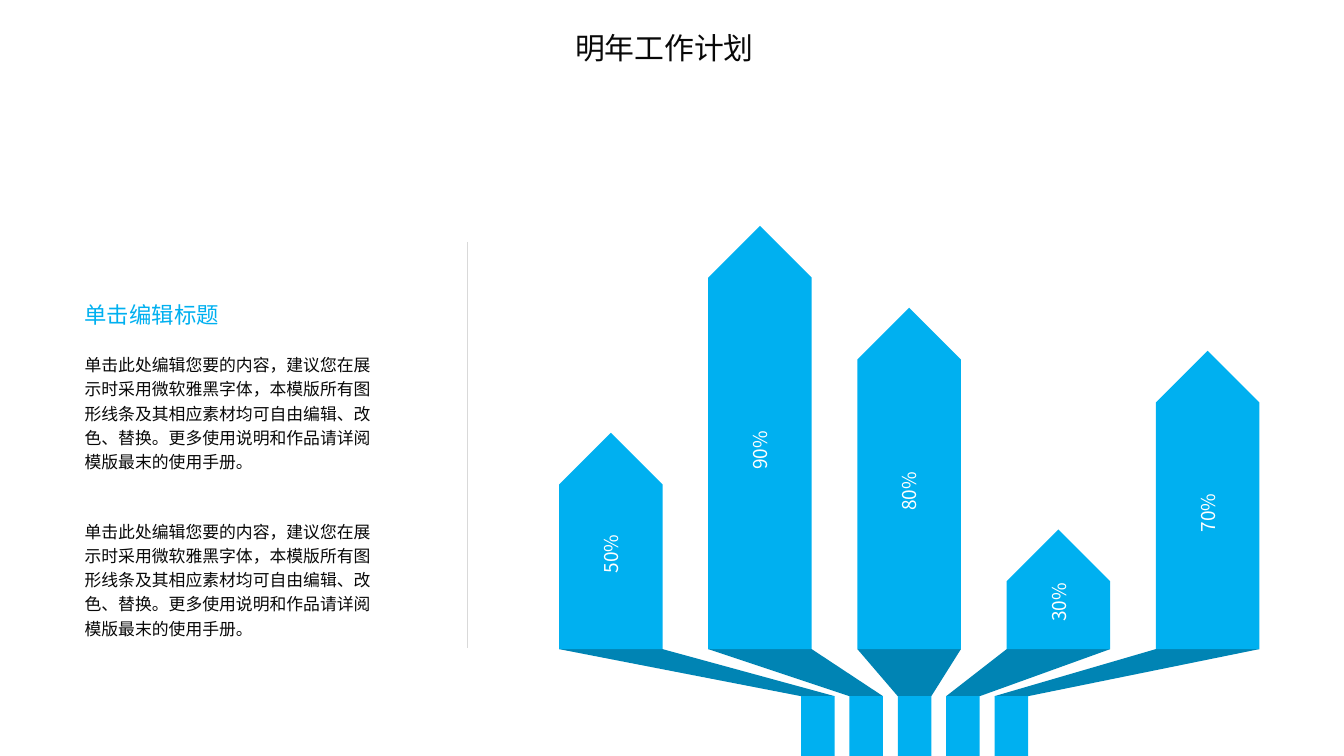
import pptx
import pptx.util
import pptx.dml.color
import pptx.enum.shapes
import pptx.enum.text
import pptx.oxml.ns
import lxml.etree

Inches = pptx.util.Inches
Pt = pptx.util.Pt
kinds = pptx.enum.shapes.MSO_SHAPE
align = pptx.enum.text.PP_ALIGN
qn = pptx.oxml.ns.qn

colors = {
    "ink": "080808",
    "blue": "00B0F0",
    "dark": "0084B4",
    "rule": "D9D9D9",
    "white": "FFFFFF",
}
font = "Noto Sans CJK SC"
body = (
    "单击此处编辑您要的内容，建议您在展示时采用微软雅黑字体，"
    "本模版所有图形线条及其相应素材均可自由编辑、改色、替换。"
    "更多使用说明和作品请详阅模版最末的使用手册。"
)


def paint(shape, color):
    shape.shadow.inherit = False
    shape.fill.solid()
    shape.fill.fore_color.rgb = pptx.dml.color.RGBColor.from_string(colors[color])
    shape.line.fill.background()


def write(shape, text, size, color, inset=0):
    frame = shape.text_frame
    frame.word_wrap = True
    frame.margin_left = frame.margin_right = Inches(inset)
    frame.margin_top = frame.margin_bottom = Inches(inset / 2)
    para = frame.paragraphs[0]
    run = para.add_run()
    run.text = text
    run.font.size = Pt(size)
    run.font.name = font
    run.font.color.rgb = pptx.dml.color.RGBColor.from_string(colors[color])
    east = lxml.etree.SubElement(run.font._element, qn("a:ea"))
    east.set("typeface", font)
    return para


deck = pptx.Presentation()
deck.slide_width = Inches(10)
deck.slide_height = Inches(10) * 9 // 16
slide = deck.slides.add_slide(deck.slide_layouts[6])
shapes = slide.shapes

title = shapes.add_textbox(Inches(4.18), Inches(0.17), Inches(1.61), Inches(0.37))
write(title, "明年工作计划", 16, "ink", 0.1)

base, neck = 4.83, 5.18
wide, slim = 0.77, 0.25
bars = [("50%", 1.61), ("90%", 3.15), ("80%", 2.54), ("30%", 0.89), ("70%", 2.22)]

for i, (label, tall) in enumerate(bars):
    left = 4.16 + 1.11 * i
    foot = 5.96 + 0.36 * i

    pen = shapes.build_freeform(Inches(left), Inches(base))
    pen.add_line_segments([
        (Inches(left + wide), Inches(base)),
        (Inches(foot + slim), Inches(neck)),
        (Inches(foot), Inches(neck)),
    ], close=True)
    paint(pen.convert_to_shape(), "dark")

    stem = shapes.add_shape(
        kinds.RECTANGLE, Inches(foot), Inches(neck), Inches(slim), Inches(0.47))
    paint(stem, "blue")

    bar = shapes.add_shape(
        kinds.PENTAGON,
        Inches(left + (wide - tall) / 2), Inches(base - (tall + wide) / 2),
        Inches(tall), Inches(wide))
    bar.rotation = 270
    paint(bar, "blue")
    bar.text_frame.vertical_anchor = pptx.enum.text.MSO_ANCHOR.MIDDLE
    write(bar, label, 10.2, "white").alignment = align.CENTER

head = shapes.add_textbox(Inches(0.63), Inches(2.24), Inches(2.24), Inches(0.2))
write(head, "单击编辑标题", 12, "blue")

for top in (2.61, 3.85):
    note = shapes.add_textbox(Inches(0.63), Inches(top), Inches(2.24), Inches(0.89))
    para = write(note, body, 9, "ink")
    para.line_spacing = 1.2
    para.space_before = Pt(1.8)

rule = shapes.add_connector(
    pptx.enum.shapes.MSO_CONNECTOR.STRAIGHT,
    Inches(3.48), Inches(1.8), Inches(3.48), Inches(4.82))
rule.line.width = Pt(0.5)
rule.line.color.rgb = pptx.dml.color.RGBColor.from_string(colors["rule"])
lxml.etree.SubElement(rule._element.spPr, qn("a:effectLst"))

deck.save("out.pptx")
